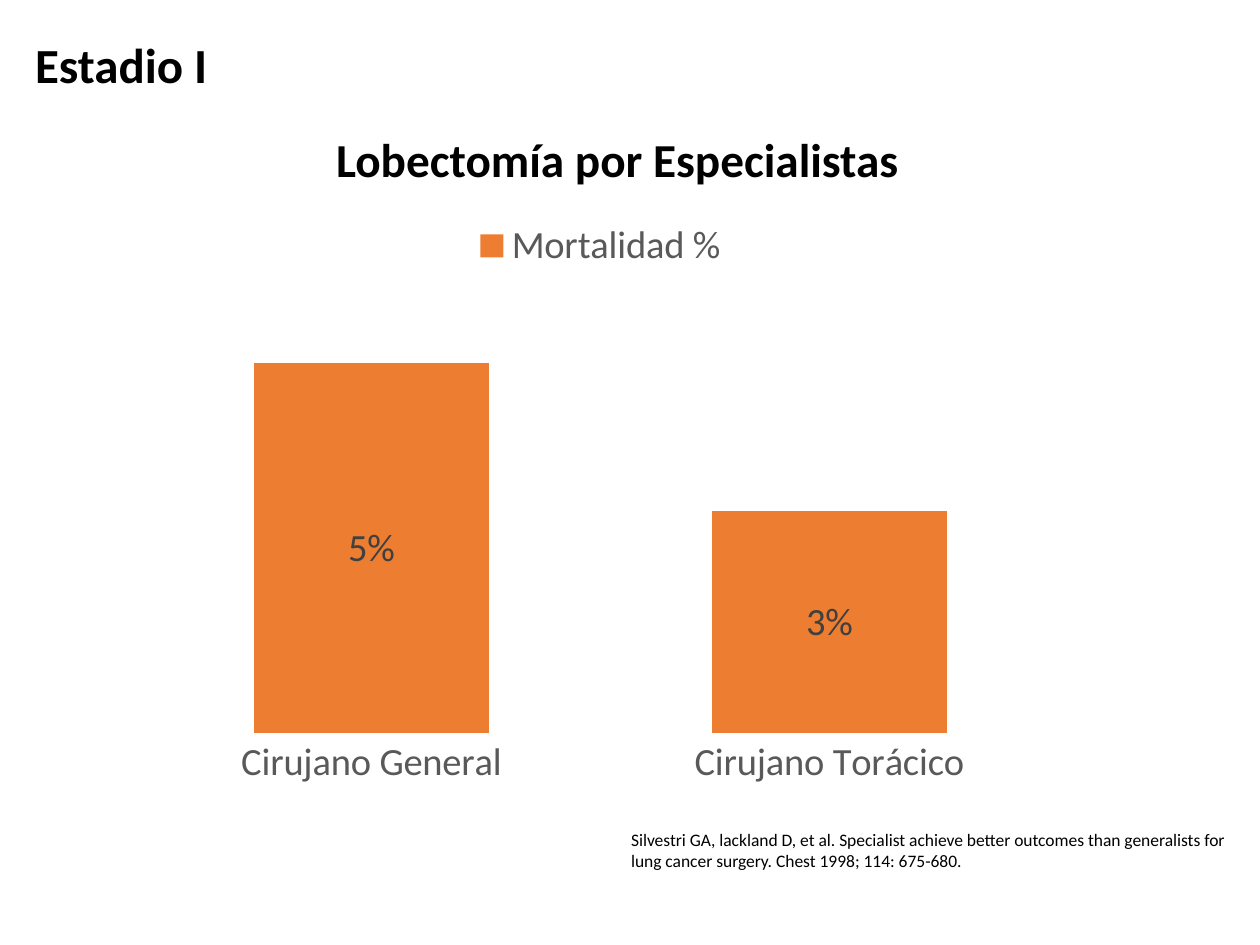
from dataclasses import dataclass

from pptx import Presentation
from pptx.chart.data import CategoryChartData
from pptx.dml.color import RGBColor
from pptx.enum.chart import (XL_CHART_TYPE, XL_LABEL_POSITION,
                             XL_LEGEND_POSITION, XL_TICK_MARK)
from pptx.enum.text import MSO_ANCHOR, PP_ALIGN
from pptx.util import Inches, Pt


@dataclass(frozen=True)
class Theme:
    face: str = "Calibri"
    ink: str = "000000"
    axis: str = "595959"
    label: str = "404040"
    bar: str = "ED7D31"
    stage: int = 28
    title: int = 27
    chart: int = 22
    cite: int = 10


THEME = Theme()


def style(item, **values):
    for name, value in values.items():
        setattr(item, name, value)


def set_font(font, size, color, bold=False):
    style(font, name=THEME.face, size=Pt(size), bold=bold)
    font.color.rgb = RGBColor.from_string(color)


def write(shape, text, size, bold=False, **para):
    frame = shape.text_frame
    frame.word_wrap = True
    frame.vertical_anchor = MSO_ANCHOR.MIDDLE if bold else MSO_ANCHOR.TOP
    line = frame.paragraphs[0]
    style(line, **para)
    run = line.add_run()
    run.text = text
    set_font(run.font, size, THEME.ink, bold)


def add_title(slide, box, text):
    title = slide.shapes.title
    style(title, **dict(zip(("left", "top", "width", "height"), box)))
    write(title, text, THEME.title, True,
          alignment=PP_ALIGN.CENTER, line_spacing=0.9)


def add_note(slide, box, text, size, bold=False, **para):
    write(slide.shapes.add_textbox(*box), text, size, bold, **para)


def add_bars(slide, box, name, rates):
    data = CategoryChartData(number_format="0%")
    data.categories = list(rates)
    data.add_series(name, list(rates.values()))
    chart = slide.shapes.add_chart(XL_CHART_TYPE.COLUMN_STACKED, *box, data).chart
    set_font(chart.font, THEME.chart, THEME.ink)
    style(chart, has_title=False, has_legend=True)
    style(chart.legend, position=XL_LEGEND_POSITION.TOP, include_in_layout=False)
    set_font(chart.legend.font, THEME.chart, THEME.axis)

    axis = chart.category_axis
    style(axis, major_tick_mark=XL_TICK_MARK.NONE, has_major_gridlines=False)
    axis.format.line.fill.background()
    set_font(axis.tick_labels.font, THEME.chart, THEME.axis)
    style(chart.value_axis, visible=False, has_major_gridlines=False,
          minimum_scale=0, maximum_scale=0.06)

    plot = chart.plots[0]
    style(plot, gap_width=95, overlap=100, vary_by_categories=False,
          has_data_labels=True)
    labels = plot.data_labels
    style(labels, show_value=True, number_format="0%",
          number_format_is_linked=False, position=XL_LABEL_POSITION.CENTER)
    set_font(labels.font, THEME.chart, THEME.label)
    fill = plot.series[0].format.fill
    fill.solid()
    fill.fore_color.rgb = RGBColor.from_string(THEME.bar)


def inch_box(*sides):
    return [Inches(side) for side in sides]


def main():
    deck = Presentation()
    style(deck, slide_width=Inches(10), slide_height=Inches(7.5))
    slide = deck.slides.add_slide(deck.slide_layouts[5])
    add_title(slide, inch_box(2.49, 0.97, 4.82, 0.63),
              "Lobectomía por Especialistas")
    add_bars(slide, inch_box(0.98, 1.63, 7.57, 4.7), "Mortalidad %",
             {"Cirujano General": 0.05, "Cirujano Torácico": 0.03})
    add_note(slide, inch_box(4.91, 6.53, 5.09, 0.44),
             "Silvestri GA, lackland D, et al. Specialist achieve better "
             "outcomes than generalists for lung cancer surgery. "
             "Chest 1998; 114: 675-680.", THEME.cite)
    add_note(slide, inch_box(0.18, 0.22, 2.31, 0.64), "Estadio I",
             THEME.stage, True, line_spacing=0.9)
    deck.save("out.pptx")


if __name__ == "__main__":
    main()
